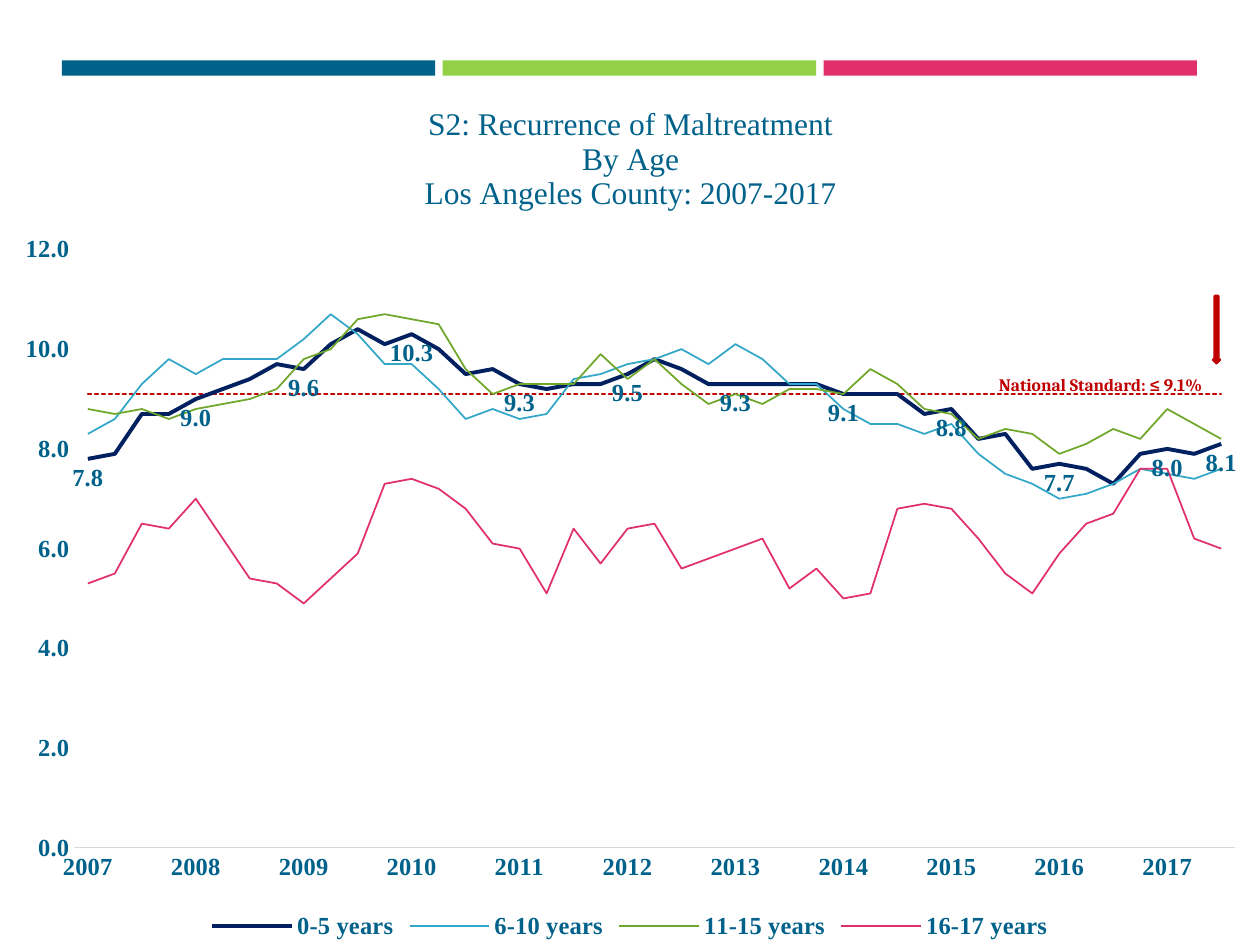
from lxml import etree
from pptx import Presentation
from pptx.chart.data import CategoryChartData
from pptx.dml.color import RGBColor
from pptx.enum.chart import XL_CHART_TYPE, XL_LABEL_POSITION, XL_LEGEND_POSITION, XL_TICK_MARK
from pptx.enum.dml import MSO_LINE
from pptx.enum.shapes import MSO_SHAPE
from pptx.enum.text import PP_ALIGN
from pptx.oxml import parse_xml
from pptx.oxml.ns import nsdecls, qn
from pptx.util import Inches, Pt

TEAL, GREEN, PINK, RED = "00618A", "92D047", "E12F6B", "C00000"
SERIF = "Times New Roman"
STANDARD = 9.1
QUARTERS = 43
LABELED_QUARTERS = [*range(0, QUARTERS, 4), QUARTERS - 1]
TITLE_LINES = ["S2: Recurrence of Maltreatment", "By Age", "Los Angeles County: 2007-2017"]
AGE_GROUPS = [
    ("0-5 years", "002060", 2.25,
     [7.8, 7.9, 8.7, 8.7, 9.0, 9.2, 9.4, 9.7, 9.6, 10.1, 10.4, 10.1, 10.3, 10.0, 9.5,
      9.6, 9.3, 9.2, 9.3, 9.3, 9.5, 9.8, 9.6, 9.3, 9.3, 9.3, 9.3, 9.3, 9.1, 9.1,
      9.1, 8.7, 8.8, 8.2, 8.3, 7.6, 7.7, 7.6, 7.3, 7.9, 8.0, 7.9, 8.1]),
    ("6-10 years", "32A7C7", 1,
     [8.3, 8.6, 9.3, 9.8, 9.5, 9.8, 9.8, 9.8, 10.2, 10.7, 10.3, 9.7, 9.7, 9.2, 8.6,
      8.8, 8.6, 8.7, 9.4, 9.5, 9.7, 9.8, 10, 9.7, 10.1, 9.8, 9.3, 9.3, 8.8, 8.5,
      8.5, 8.3, 8.5, 7.9, 7.5, 7.3, 7, 7.1, 7.3, 7.6, 7.5, 7.4, 7.6]),
    ("11-15 years", "6FA72B", 1,
     [8.8, 8.7, 8.8, 8.6, 8.8, 8.9, 9, 9.2, 9.8, 10, 10.6, 10.7, 10.6, 10.5, 9.6,
      9.1, 9.3, 9.3, 9.3, 9.9, 9.4, 9.8, 9.3, 8.9, 9.1, 8.9, 9.2, 9.2, 9.1, 9.6,
      9.3, 8.8, 8.7, 8.2, 8.4, 8.3, 7.9, 8.1, 8.4, 8.2, 8.8, 8.5, 8.2]),
    ("16-17 years", PINK, 1,
     [5.3, 5.5, 6.5, 6.4, 7, 6.2, 5.4, 5.3, 4.9, 5.4, 5.9, 7.3, 7.4, 7.2, 6.8,
      6.1, 6, 5.1, 6.4, 5.7, 6.4, 6.5, 5.6, 5.8, 6, 6.2, 5.2, 5.6, 5, 5.1,
      6.8, 6.9, 6.8, 6.2, 5.5, 5.1, 5.9, 6.5, 6.7, 7.6, 7.6, 6.2, 6]),
]


def rgb(color):
    return RGBColor.from_string(color)


def style_font(font, size, color=TEAL, bold=True, name=SERIF):
    font.size, font.bold, font.name = Pt(size), bold, name
    font.color.rgb = rgb(color)


def add_solid(slide, preset, box, color):
    solid = slide.shapes.add_shape(preset, *map(Inches, box))
    solid.shadow.inherit = False
    solid.fill.solid()
    solid.fill.fore_color.rgb = rgb(color)
    solid.line.fill.background()
    return solid


def add_color_bars(slide, left, top, width, height, gap=0.06):
    colors = [TEAL, GREEN, PINK]
    bar_width = (width - gap * (len(colors) - 1)) / len(colors)
    for index, color in enumerate(colors):
        bar_left = left + index * (bar_width + gap)
        add_solid(slide, MSO_SHAPE.RECTANGLE, (bar_left, top, bar_width, height), color)


def set_layout(parent, position, x, y, width=None, height=None):
    parts = [("xMode", "edge"), ("yMode", "edge"), ("x", x), ("y", y)]
    if width:
        parts = [("layoutTarget", "inner")] + parts + [("w", width), ("h", height)]
    inner = "".join(f'<c:{tag} val="{value}"/>' for tag, value in parts)
    for old in parent.findall(qn("c:layout")):
        parent.remove(old)
    parent.insert(position, parse_xml(
        f'<c:layout {nsdecls("c")}><c:manualLayout>{inner}</c:manualLayout></c:layout>'))


def add_chart_title(chart, x, y):
    title = chart.chart_title
    frame = title.text_frame
    frame.text = "\n".join(TITLE_LINES)
    for paragraph in frame.paragraphs:
        paragraph.alignment = PP_ALIGN.CENTER
        for run in paragraph.runs:
            style_font(run.font, 18, bold=False)
    title.include_in_layout = False
    set_layout(title._element, 1, x, y)


def style_axes(chart):
    years, rates = chart.category_axis, chart.value_axis
    for axis in (years, rates):
        axis.has_major_gridlines = False
        axis.major_tick_mark = axis.minor_tick_mark = XL_TICK_MARK.NONE
        style_font(axis.tick_labels.font, 14)
    years.format.line.color.rgb = rgb("D9D9D9")
    years.format.line.width = Pt(0.75)
    years._element.find(qn("c:txPr")).find(qn("a:bodyPr")).set("rot", "-60000000")
    label_skip = etree.Element(qn("c:tickLblSkip"), val="1")
    years._element.find(qn("c:noMultiLvlLbl")).addprevious(label_skip)
    rates.minimum_scale, rates.maximum_scale, rates.major_unit = 0, 12, 2
    rates.tick_labels.number_format = "0.0"
    rates.tick_labels.number_format_is_linked = False
    rates.format.line.fill.background()


def style_series(series, color, width):
    series.smooth = False
    series.format.line.color.rgb = rgb(color)
    series.format.line.width = Pt(width)


def dash_standard(standard):
    standard.format.line.dash_style = MSO_LINE.SQUARE_DOT
    outline = standard._element.find(qn("c:spPr")).find(qn("a:ln"))
    outline.set("cap", "rnd")
    dash = outline.find(qn("a:prstDash"))
    dash.set("val", "sysDash")
    dash.addnext(etree.Element(qn("a:round")))


def label_points(series):
    series.data_labels.show_value = False
    for quarter in LABELED_QUARTERS:
        label = series.points[quarter].data_label
        style_font(label.font, 14)
        label.position = XL_LABEL_POSITION.BELOW


def add_legend(chart):
    chart.has_legend = True
    legend = chart.legend
    legend.position = XL_LEGEND_POSITION.BOTTOM
    legend.include_in_layout = False
    style_font(legend.font, 14)
    hidden_standard = parse_xml(
        f'<c:legendEntry {nsdecls("c")}><c:idx val="0"/><c:delete val="1"/></c:legendEntry>')
    legend._element.find(qn("c:legendPos")).addnext(hidden_standard)


def add_recurrence_chart(slide, left, top, width, height):
    data = CategoryChartData(number_format="0.0")
    data.categories = ["" if q % 4 else str(2007 + q // 4) for q in range(QUARTERS)]
    data.add_series("Series 1", [STANDARD] * QUARTERS)
    for name, _, _, rates in AGE_GROUPS:
        data.add_series(name, rates)
    box = map(Inches, (left, top, width, height))
    chart = slide.shapes.add_chart(XL_CHART_TYPE.LINE, *box, data).chart
    style_font(chart.font, 10, "000000", False, "Calibri")
    chart.plots[0].vary_by_categories = False
    add_chart_title(chart, 3.34 / width, 0.19 / height)
    style_axes(chart)
    add_legend(chart)
    standard, *ages = chart.plots[0].series
    style_series(standard, RED, 1)
    dash_standard(standard)
    for series, (_, color, line_width, _) in zip(ages, AGE_GROUPS):
        style_series(series, color, line_width)
    label_points(ages[0])
    plot_area = chart._chartSpace.chart.plotArea
    set_layout(plot_area, 0, 0.59 / width, 1.36 / height, 9.21 / width, 4.75 / height)


def add_standard_note(slide, left, top, width, height):
    note = slide.shapes.add_textbox(*map(Inches, (left, top, width, height)))
    frame = note.text_frame
    frame.word_wrap = True
    frame.text = "National Standard: ≤ 9.1%"
    style_font(frame.paragraphs[0].runs[0].font, 10, RED, name="Cambria")


def add_goal_arrow(slide, left, top, width, height):
    arrow = add_solid(slide, MSO_SHAPE.DOWN_ARROW, (left, top, width, height), RED)
    arrow.line.color.rgb = rgb(RED)
    arrow.line.width = Pt(1.75)


def main():
    deck = Presentation()
    deck.slide_width, deck.slide_height = Inches(10), Inches(7.5)
    slide = deck.slides.add_slide(deck.slide_layouts[6])
    add_color_bars(slide, 0.49, 0.48, 9.01, 0.12)
    add_recurrence_chart(slide, 0, 0.62, 10, 6.88)
    add_standard_note(slide, 7.83, 2.92, 1.83, 0.27)
    add_goal_arrow(slide, 9.63, 2.35, 0.05, 0.53)
    deck.save("out.pptx")


if __name__ == "__main__":
    main()
